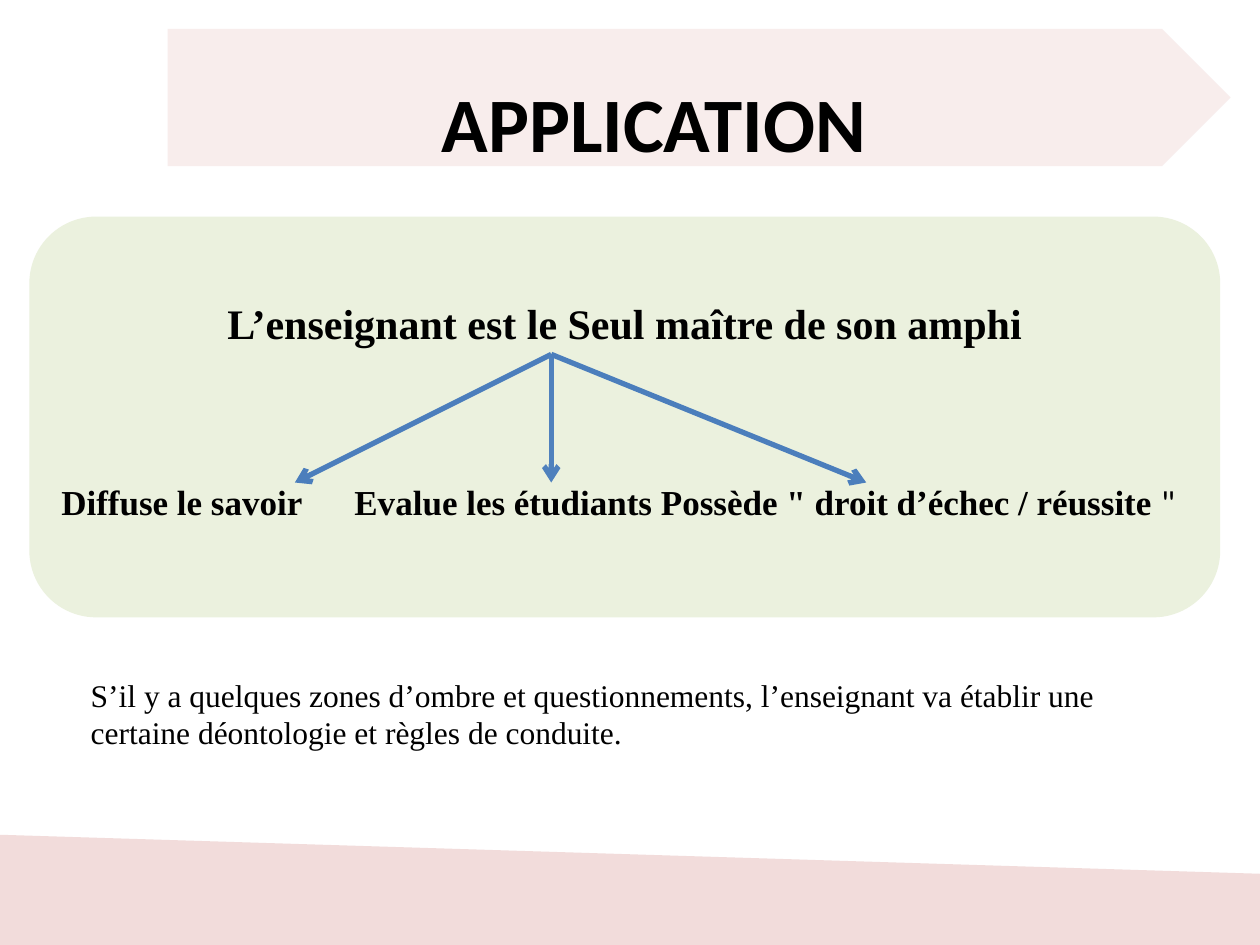
from lxml.etree import SubElement
from pptx import Presentation
from pptx.dml.color import RGBColor
from pptx.enum.shapes import MSO_CONNECTOR, MSO_SHAPE
from pptx.enum.text import MSO_ANCHOR, PP_ALIGN
from pptx.oxml.ns import qn
from pptx.util import Pt


def color(code):
    return RGBColor.from_string(code)


def write(par, text, size, face="Times New Roman", bold=False):
    run = par.add_run()
    run.text = text
    run.font.size = Pt(size)
    run.font.name = face
    run.font.bold = bold
    run.font.color.rgb = color("000000")


deck = Presentation()
deck.slide_width, deck.slide_height = Pt(720), Pt(540)
slide = deck.slides.add_slide(deck.slide_layouts[6])
shapes = slide.shapes

# Sloped footer band
pen = shapes.build_freeform(Pt(0), Pt(478), scale=1.0)
edge = [(726, 500.5), (721.5, 535), (720, 540), (0, 540)]
pen.add_line_segments([(Pt(x), Pt(y)) for x, y in edge], close=True)
band = pen.convert_to_shape()
band.shadow.inherit = False
band.fill.solid()
band.fill.fore_color.rgb = color("F2DCDB")
band.line.color.rgb = color("F2DCDB")
band.line.width = Pt(2)

# Title banner and main panel
banner = shapes.add_shape(MSO_SHAPE.PENTAGON, Pt(95.75), Pt(16.5), Pt(607.5), Pt(78.5))
title = shapes.add_textbox(Pt(50.5), Pt(39.5), Pt(646.5), Pt(60.5))
panel = shapes.add_shape(MSO_SHAPE.FLOWCHART_ALTERNATE_PROCESS,
                         Pt(16.75), Pt(123.75), Pt(680.5), Pt(229))
for shape, fill in ((banner, "F8EDEC"), (panel, "EBF1DE")):
    shape.shadow.inherit = False
    shape.fill.solid()
    shape.fill.fore_color.rgb = color(fill)
    shape.line.fill.background()

title.text_frame.word_wrap = True
head = title.text_frame.paragraphs[0]
head.alignment = PP_ALIGN.CENTER
write(head, "APPLICATION", 44, "Calibri", True)

frame = panel.text_frame
frame.word_wrap = True
frame.vertical_anchor = MSO_ANCHOR.TOP
frame.margin_top = Pt(35)
lead = frame.paragraphs[0]
lead.alignment = PP_ALIGN.CENTER
write(lead, "L’enseignant est le Seul maître de son amphi", 24, bold=True)

roles = frame.add_paragraph()
roles.alignment = PP_ALIGN.LEFT
roles.space_before = Pt(76)
stops = SubElement(roles._p.get_or_add_pPr(), qn("a:tabLst"))
SubElement(stops, qn("a:tab"), pos=str(Pt(167.5)), algn="l")
write(roles, "Diffuse le savoir\t", 20, bold=True)
write(roles, "Evalue les étudiants Possède \" droit d’échec / réussite ", 20, bold=True)
write(roles, "\"", 20, "Calibri")

# Arrows from the statement to the three roles
for x, tint in ((168.5, "4B7EBC"), (315, "4F81BD"), (495, "4B7EBC")):
    arrow = shapes.add_connector(MSO_CONNECTOR.STRAIGHT, Pt(315), Pt(202.5), Pt(x), Pt(275.75))
    arrow.line.color.rgb = color(tint)
    arrow.line.width = Pt(3)
    SubElement(arrow.line._get_or_add_ln(), qn("a:tailEnd"), type="arrow")
    SubElement(arrow._element.spPr, qn("a:effectLst"))

note = shapes.add_textbox(Pt(44.75), Pt(382.5), Pt(635.75), Pt(51))
note.text_frame.word_wrap = True
write(note.text_frame.paragraphs[0],
      "S’il y a quelques zones d’ombre et questionnements, l’enseignant va établir "
      "une certaine déontologie et règles de conduite.", 18)

deck.save("out.pptx")
